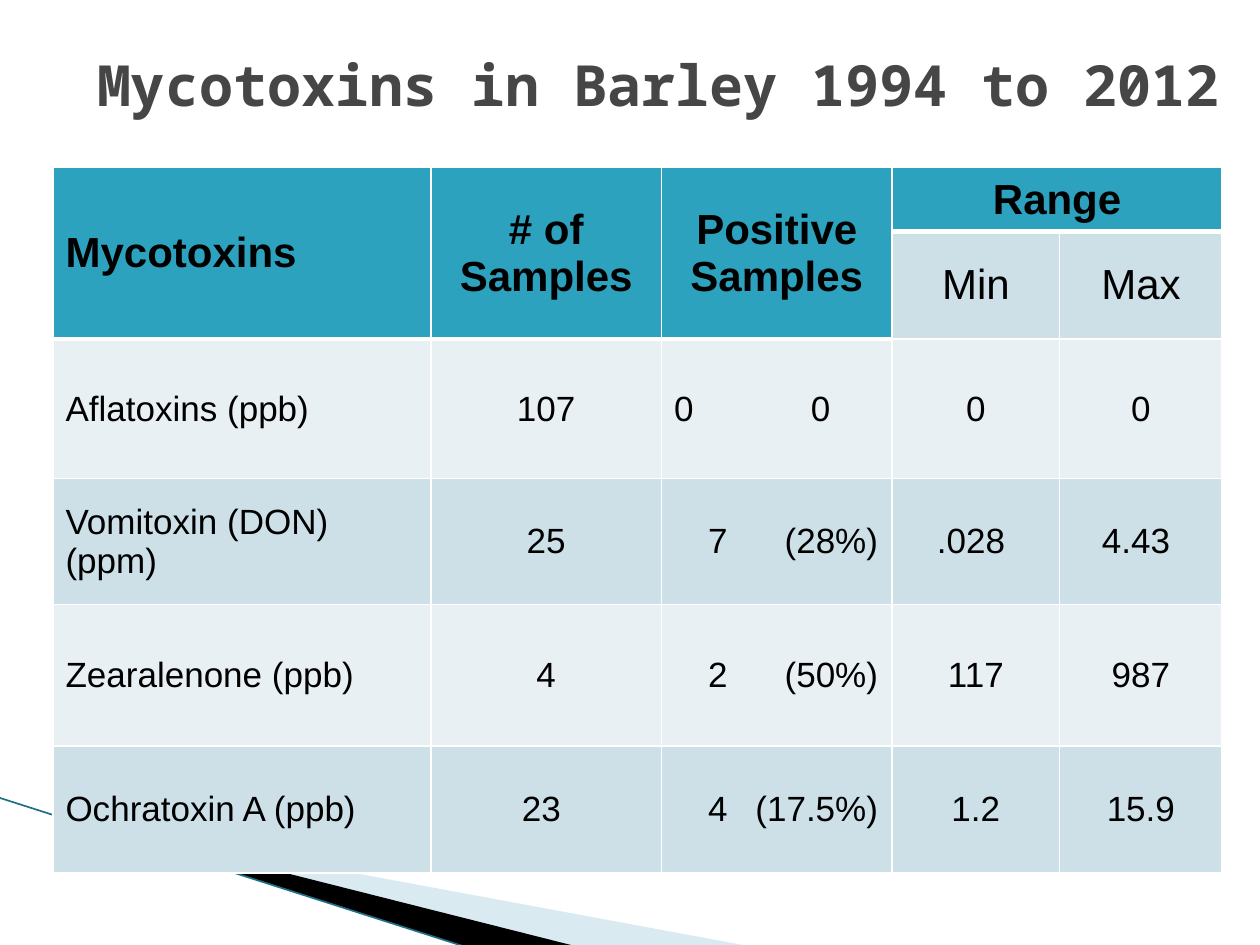
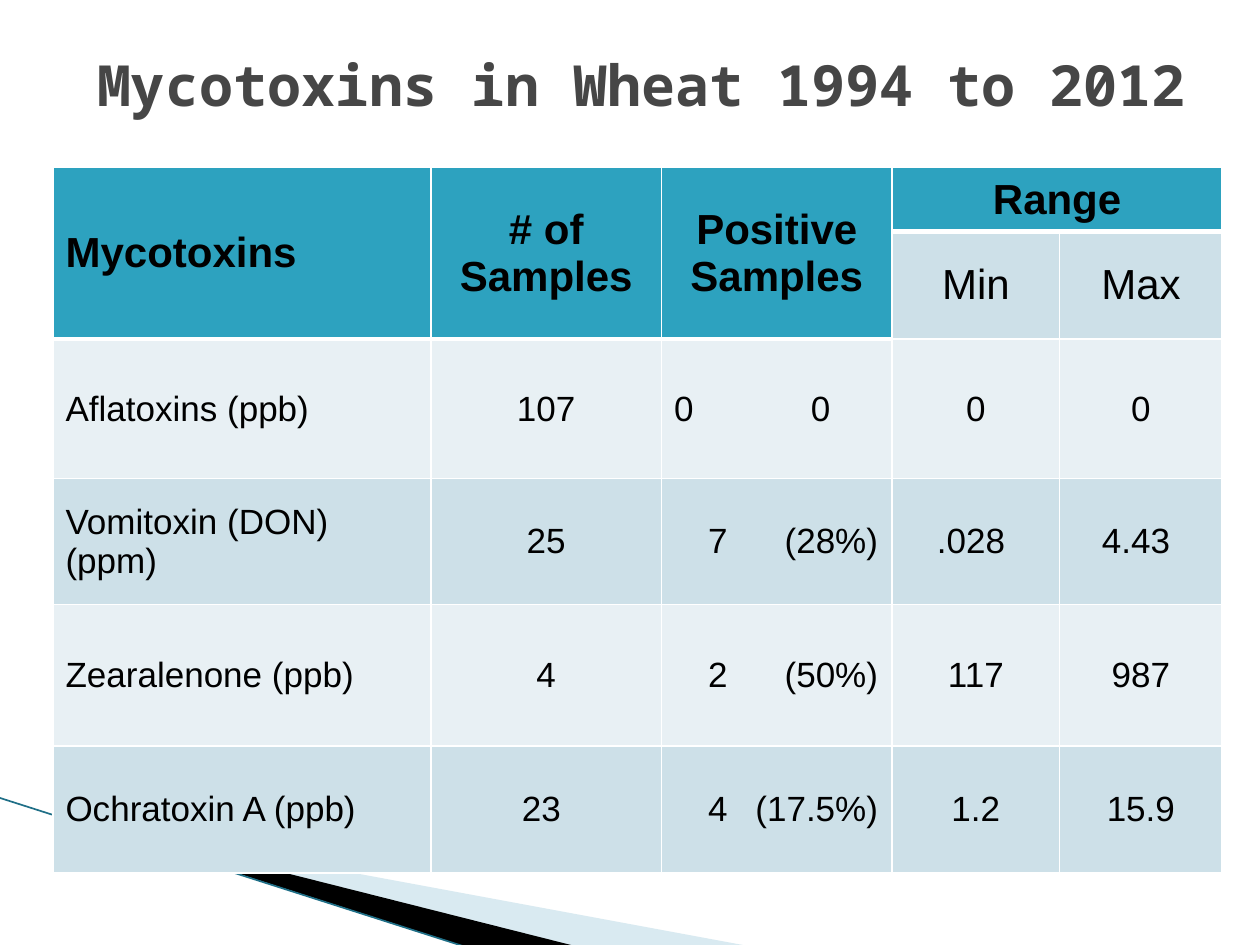
import lxml.etree
import pptx
import pptx.dml.color
import pptx.enum.shapes
import pptx.enum.text
import pptx.oxml
import pptx.oxml.ns
import pptx.util

Inches, Pt = pptx.util.Inches, pptx.util.Pt
ALIGN = pptx.enum.text.PP_ALIGN
MIDDLE = pptx.enum.text.MSO_ANCHOR.MIDDLE
qn = pptx.oxml.ns.qn

TITLE_FONT, TABLE_FONT = "Noto Sans Mono", "Arial"
TITLE_GREY, BLACK, WHITE = "464646", "000000", "FFFFFF"
HEADER, BAND_DARK, BAND_LIGHT = "2DA2BF", "CDE0E8", "E8F0F4"
WEDGE_BLUE, EDGE_TEAL = "A0CBDC", "1F6F87"

TITLE_BOX = (0.67, 0.33, 9.25, 0.67)
TABLE_BOX = (0.42, 1.33, 9.29, 5.59)
SWOOSH_BOX = (0, 6.33, 5.95, 1.18)
COL_WIDTHS = (3, 1.83, 1.83, 1.33, 1.29)
ROW_HEIGHTS = (0.51, 0.85, 1.11, 1, 1.12, 1.01)
POSITIVE_COL = 2
ROWS = [
    ("Mycotoxins", "# of Samples", "Positive Samples", "Range", ""),
    ("", "", "", "Min", "Max"),
    ("Aflatoxins (ppb)", "107", "0\t0", "0", "0"),
    ("Vomitoxin (DON) (ppm)", "25", "7\t(28%)", ".028 ", "4.43 "),
    ("Zearalenone (ppb)", "4", "2\t(50%)", "117", "987"),
    ("Ochratoxin A (ppb)", "23 ", "4\t(17.5%)", "1.2", "15.9"),
]


def rgb(color):
    return pptx.dml.color.RGBColor.from_string(color)


def set_font(p, name, size, color, bold):
    p.font.name, p.font.size, p.font.bold = name, Pt(size), bold
    p.font.color.rgb = rgb(color)


def add_wedge(s, box, points, color, alpha=None):
    """Fill an outline whose points are inches from the corner of box."""
    pts = [(Inches(box[0] + x), Inches(box[1] + y)) for x, y in points]
    builder = s.shapes.build_freeform(*pts[0])
    builder.add_line_segments(pts[1:])
    sp = builder.convert_to_shape()
    sp.shadow.inherit = False
    sp.fill.solid()
    sp.fill.fore_color.rgb = rgb(color)
    sp.line.fill.background()
    if alpha:
        clr = sp.fill._xPr.find(qn("a:solidFill"))[0]
        lxml.etree.SubElement(clr, qn("a:alpha"), val=str(alpha * 1000))


def add_swoosh(s, box):
    add_wedge(s, box, [(0.55, 0.18), (5.95, 1.18), (4.56, 1.18), (0.55, 0.17)],
              WEDGE_BLUE, 40)
    add_wedge(s, box, [(0.53, 0.16), (4.57, 1.18), (3.72, 1.19), (0.54, 0.17)],
              BLACK)
    x, y = box[:2]
    edge = s.shapes.add_connector(
        pptx.enum.shapes.MSO_CONNECTOR.STRAIGHT,
        Inches(x - 0.01), Inches(y), Inches(x + 3.71), Inches(y + 1.19))
    edge.line.color.rgb = rgb(EDGE_TEAL)
    edge.line.width = Pt(0.95)
    lxml.etree.SubElement(edge._element.spPr, qn("a:effectLst"))


def add_title(s, box, text):
    sp = s.shapes.title
    sp.left, sp.top, sp.width, sp.height = map(Inches, box)
    tf = sp.text_frame
    tf.text = text
    tf.vertical_anchor = MIDDLE
    tf.auto_size = pptx.enum.text.MSO_AUTO_SIZE.NONE
    p = tf.paragraphs[0]
    p.alignment = ALIGN.LEFT
    set_font(p, TITLE_FONT, 32.4, TITLE_GREY, True)


def set_borders(cell, top, bottom):
    """Draw white cell edges, with the given top and bottom widths in points."""
    tc_pr = cell._tc.get_or_add_tcPr()
    for side, width in (("L", 1), ("R", 1), ("T", top), ("B", bottom)):
        ln = lxml.etree.SubElement(tc_pr, qn(f"a:ln{side}"), w=str(Pt(width)))
        fill = lxml.etree.SubElement(ln, qn("a:solidFill"))
        lxml.etree.SubElement(fill, qn("a:srgbClr"), val=WHITE)


def add_right_tab(p, inches):
    tabs = lxml.etree.SubElement(p._p.get_or_add_pPr(), qn("a:tabLst"))
    lxml.etree.SubElement(tabs, qn("a:tab"), pos=str(Inches(inches)), algn="r")


def is_header(row, col):
    return row == 0 or row == 1 and col <= POSITIVE_COL


def format_cell(cell, row, col, text):
    header = is_header(row, col)
    after_header = row > 0 and not header and is_header(row - 1, col)
    set_borders(cell, 3 if after_header else 1, 3 if header else 1)
    cell.fill.solid()
    cell.fill.fore_color.rgb = rgb(
        HEADER if header else BAND_DARK if row % 2 else BAND_LIGHT)
    cell.vertical_anchor = MIDDLE
    if not text:
        return
    cell.text = text
    p = cell.text_frame.paragraphs[0]
    p.alignment = ALIGN.LEFT if col == 0 or "\t" in text else ALIGN.CENTER
    if "\t" in text:
        has_percent = "%" in text
        cell.margin_left = Inches(0.37 if has_percent else 0.1)
        add_right_tab(p, 1.35 if has_percent else 1.24)
    set_font(p, TABLE_FONT, 24 if row < 2 else 20, BLACK, header)


def add_toxin_table(s, box, rows):
    table = s.shapes.add_table(len(rows), len(COL_WIDTHS), *map(Inches, box)).table
    table.first_row = table.horz_banding = False
    for column, width in zip(table.columns, COL_WIDTHS):
        column.width = Inches(width)
    for row, height in zip(table.rows, ROW_HEIGHTS):
        row.height = Inches(height)
    for i, values in enumerate(rows):
        for j, text in enumerate(values):
            format_cell(table.cell(i, j), i, j, text)
    for j in range(POSITIVE_COL + 1):
        table.cell(0, j).merge(table.cell(1, j))
    table.cell(0, 3).merge(table.cell(0, 4))


def add_grain_slide(prs, grain):
    s = prs.slides.add_slide(prs.slide_layouts[5])
    add_swoosh(s, SWOOSH_BOX)
    add_toxin_table(s, TABLE_BOX, ROWS)
    add_title(s, TITLE_BOX, f"Mycotoxins in {grain} 1994 to 2012")


def main():
    prs = pptx.Presentation()
    prs.slide_width, prs.slide_height = Inches(10), Inches(7.5)
    for grain in ("Barley", "Wheat"):
        add_grain_slide(prs, grain)
    prs.save("out.pptx")


if __name__ == "__main__":
    main()
